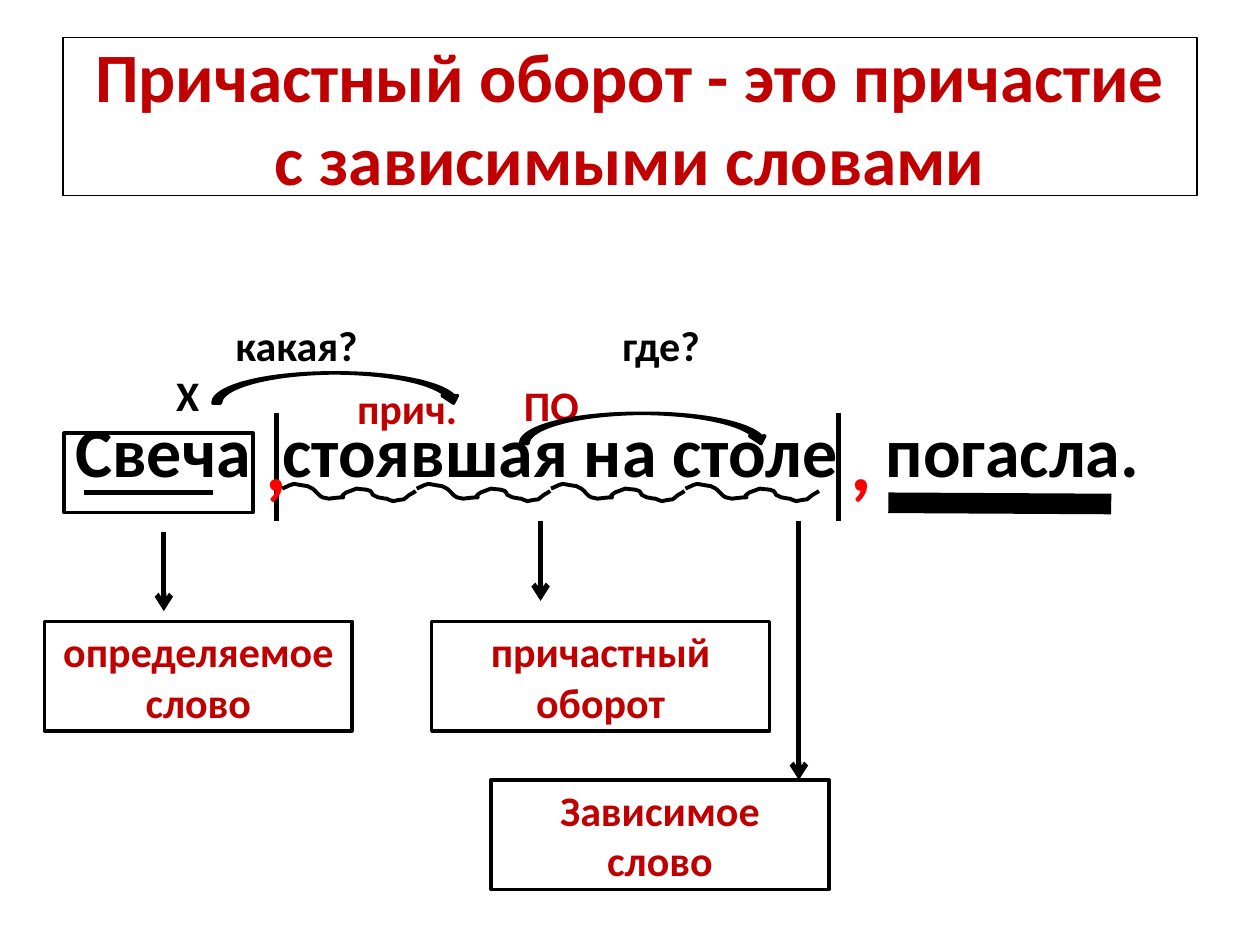
from dataclasses import dataclass

from lxml.etree import SubElement
from pptx import Presentation
from pptx.dml.color import RGBColor
from pptx.enum.shapes import MSO_CONNECTOR, MSO_SHAPE
from pptx.enum.text import MSO_ANCHOR, PP_ALIGN
from pptx.oxml.ns import qn
from pptx.util import Pt

BLACK = RGBColor(0, 0, 0)
DARK_RED = RGBColor(0xC0, 0, 0)
RED = RGBColor(0xFF, 0, 0)
FONT = "Calibri"


@dataclass
class Label:
    text: str
    x: float
    y: float
    w: float
    h: float
    size: float = 24
    color: RGBColor = BLACK
    centered: bool = False
    wrap: bool = True
    border: float = 0


@dataclass
class Line:
    x1: float
    y1: float
    x2: float
    y2: float
    width: float = 3
    arrow: bool = False


TITLE = Label("Причастный оборот - это причастие с зависимыми словами",
              36, 21.6, 648, 90, 39.6, DARK_RED, True, border=0.75)
SENTENCE = Label("Свеча\tстоявшая на столе\tпогасла.", 36, 229.3, 648, 56, 40)
SENTENCE_TABS = (118.4, 463.2)

LABELS = [
    Label("какая?", 127.4, 179.3, 85, 36, wrap=False),
    Label("где?", 348.5, 179.3, 59, 36, wrap=False),
    Label("Х", 93.6, 207.4, 28, 36, wrap=False),
    Label("ПО", 292.3, 213.1, 46, 36, color=DARK_RED, wrap=False),
    Label("прич.", 178.6, 218.9, 108, 28, color=DARK_RED, centered=True),
]
COMMAS = [Label(",", x, 242, 17.3, 39.6, 48, RED, True) for x in (144.7, 478.8)]
CAPTIONS = [
    Label(text, x, y, w, 62.6, color=DARK_RED, centered=True, border=2)
    for text, x, y, w in (
        ("определяемое слово", 25.5, 355.1, 175.7),
        ("причастный оборот", 246.7, 355.1, 193),
        ("Зависимое слово", 280.6, 445.7, 193),
    )
]
DIVIDERS = [Line(x, 236.2, x, 298) for x in (158, 479)]
UNDERLINES = [
    Line(48.2, 281.5, 121.7, 281.5),
    Line(507.6, 287.3, 635, 288, 11.75),
]
ARROWS = [
    Line(93.6, 303.8, 93.6, 349.2, arrow=True),
    Line(308.9, 298, 308.9, 343.4, arrow=True),
    Line(456.5, 298, 456.5, 445.7, arrow=True),
]
QUESTION_ARCS = [(121.7, 213.1), (297.4, 236.2)]

WAVE_X, WAVE_Y, WAVE_STEP, WAVE_COUNT = 161.3, 279.2, 76.8, 4
# Two control points and an end point per Bezier segment
WAVE = [
    ((8.6, -3.6), (3.6, -2.9), (14.4, -1.4)),
    ((15.1, -0.7), (16.6, -0.7), (17.3, 0)),
    ((19.4, 1.4), (20.9, 4.3), (23, 5)),
    ((23, 5), (26.6, 5.8), (26.6, 5.8)),
    ((43.2, 3.6), (28.8, 7.2), (36.7, 2.2)),
    ((38.9, 1.4), (42.5, 0), (42.5, 0)),
    ((45.4, 0.7), (47.5, 0), (50.4, 1.4)),
    ((51.1, 1.4), (51.1, 2.9), (51.8, 3.6)),
    ((52.6, 4.3), (54, 4.3), (54.7, 5)),
    ((56.2, 5), (57.6, 5.8), (59.8, 5.8)),
    ((60.5, 6.5), (61.9, 6.5), (63.4, 7.2)),
    ((72.7, 5), (67, 7.9), (72.7, 3.6)),
    ((74.2, 2.9), (76.3, 1.4), (76.3, 1.4)),
]


def set_line(sp, width: float) -> None:
    sp.line.color.rgb = BLACK
    sp.line.width = Pt(width)


def add_box(s, x: float, y: float, w: float, h: float, border: float):
    """Add an unfilled rectangle with a black border."""
    sp = s.shapes.add_shape(MSO_SHAPE.RECTANGLE, Pt(x), Pt(y), Pt(w), Pt(h))
    sp.shadow.inherit = False
    sp.fill.background()
    set_line(sp, border)
    return sp


def add_label(s, label: Label):
    if label.border:
        sp = add_box(s, label.x, label.y, label.w, label.h, label.border)
    else:
        sp = s.shapes.add_textbox(Pt(label.x), Pt(label.y), Pt(label.w), Pt(label.h))
    tf = sp.text_frame
    tf.word_wrap = label.wrap
    tf.vertical_anchor = MSO_ANCHOR.MIDDLE if label.centered else MSO_ANCHOR.TOP
    p = tf.paragraphs[0]
    p.alignment = PP_ALIGN.CENTER if label.centered else PP_ALIGN.LEFT
    r = p.add_run()
    r.text = label.text
    r.font.name = FONT
    r.font.size = Pt(label.size)
    r.font.bold = True
    r.font.color.rgb = label.color
    return sp


def add_tabs(sp, stops) -> None:
    tabs = SubElement(sp.text_frame.paragraphs[0]._p.get_or_add_pPr(), qn("a:tabLst"))
    for stop in stops:
        SubElement(tabs, qn("a:tab"), pos=str(Pt(stop)), algn="l")


def add_line(s, line: Line) -> None:
    sp = s.shapes.add_connector(MSO_CONNECTOR.STRAIGHT, Pt(line.x1), Pt(line.y1),
                                Pt(line.x2), Pt(line.y2))
    set_line(sp, line.width)
    if line.arrow:
        SubElement(sp.line._get_or_add_ln(), qn("a:tailEnd"), type="arrow")
    SubElement(sp._element.spPr, qn("a:effectLst"))


def add_arc(s, x: float, y: float) -> None:
    sp = s.shapes.add_shape(MSO_SHAPE.CURVED_DOWN_ARROW, Pt(x), Pt(y), Pt(141.8), Pt(17.3))
    sp.shadow.inherit = False
    sp.fill.solid()
    sp.fill.fore_color.rgb = BLACK
    set_line(sp, 2)


def curve_segments(sp) -> None:
    """Turn every three straight segments of a freeform into one Bezier segment."""
    lines = list(sp._element.iter(qn("a:lnTo")))
    outline = lines[0].getparent()
    for i in range(0, len(lines), 3):
        curve = SubElement(outline, qn("a:cubicBezTo"))
        for line in lines[i:i + 3]:
            curve.append(line[0])
            outline.remove(line)


def add_waves(s) -> None:
    group = s.shapes.add_group_shape()
    for i in range(WAVE_COUNT):
        x = WAVE_X + i * WAVE_STEP
        builder = group.shapes.build_freeform(Pt(x), Pt(WAVE_Y))
        points = [(Pt(x + dx), Pt(WAVE_Y + dy)) for segment in WAVE for dx, dy in segment]
        builder.add_line_segments(points, close=False)
        sp = builder.convert_to_shape()
        curve_segments(sp)
        sp.shadow.inherit = False
        sp.fill.background()
        set_line(sp, 2.25)


def main() -> None:
    prs = Presentation()
    prs.slide_width, prs.slide_height = Pt(720), Pt(540)
    s = prs.slides.add_slide(prs.slide_layouts[6])
    add_label(s, TITLE)
    add_tabs(add_label(s, SENTENCE), SENTENCE_TABS)
    for label in LABELS:
        add_label(s, label)
    for line in DIVIDERS:
        add_line(s, line)
    for x, y in QUESTION_ARCS:
        add_arc(s, x, y)
    for label in COMMAS:
        add_label(s, label)
    for line in UNDERLINES:
        add_line(s, line)
    add_box(s, 36.7, 247.5, 108, 45.4, 2)
    add_waves(s)
    for line in ARROWS:
        add_line(s, line)
    for label in CAPTIONS:
        add_label(s, label)
    prs.save("out.pptx")


if __name__ == "__main__":
    main()
